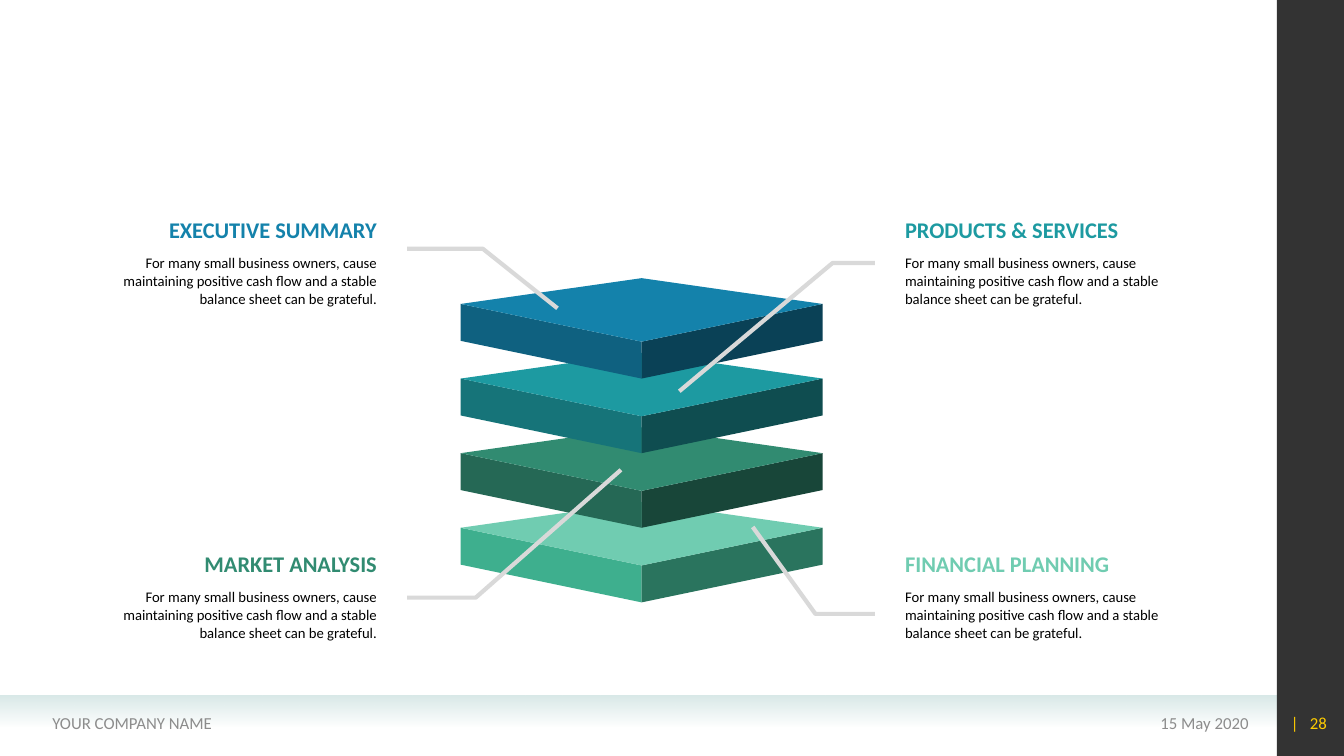
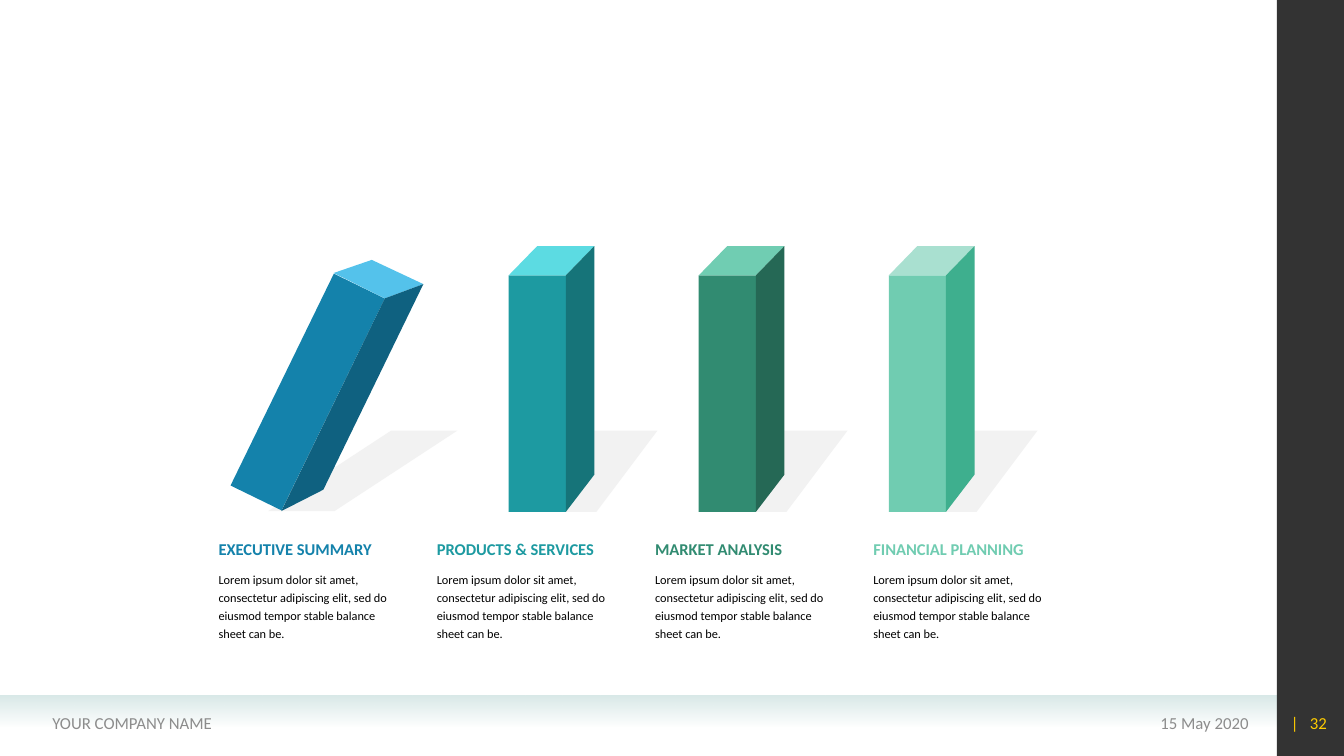
from pptx import Presentation
from pptx.dml.color import RGBColor
from pptx.enum.shapes import MSO_SHAPE
from pptx.enum.text import MSO_ANCHOR, PP_ALIGN
from pptx.oxml.ns import qn
from pptx.util import Cm, Pt
from lxml.etree import SubElement

FONT = "Calibri"
SLIDE_W, SLIDE_H = 33.87, 19.05
SIDE_BAND_X = 32.18

COLORS = {
    "text": "000000",
    "footer": "8C8C8C",
    "number": "FFCC00",
    "side band": "000000",
    "footer band": "D9E9E8",
    "leader": "D9D9D9",
    "shadow": "F2F2F2",
    "blue": "1482AB", "blue light": "54C2EB", "blue side": "0F6180", "blue dark": "0A4156",
    "teal": "1D9AA1", "teal light": "5CDBE2", "teal side": "167479", "teal dark": "0F4D50",
    "green": "318B71", "green light": "70CDB2", "green side": "256855", "green dark": "184639",
    "mint": "70CCB1", "mint light": "A9E0D0", "mint side": "3EAF8E", "mint dark": "2A745E",
}

TOPICS = [
    ("EXECUTIVE SUMMARY", "blue"),
    ("PRODUCTS & SERVICES", "teal"),
    ("MARKET ANALYSIS", "green"),
    ("FINANCIAL PLANNING", "mint"),
]
CASH_FLOW = ("For many small business owners, cause maintaining positive cash flow "
             "and a stable balance sheet can be grateful.")
LOREM = ("Lorem ipsum dolor sit amet, consectetur adipiscing elit, sed do eiusmod "
         "tempor stable balance sheet can be.")

# One leader per topic, from its slab out to its caption
LEADERS = [
    [(14.05, 7.77), (12.17, 6.27), (10.26, 6.27)],
    [(17.12, 9.86), (20.98, 6.63), (22.05, 6.63)],
    [(15.65, 11.84), (11.99, 15.06), (10.26, 15.06)],
    [(18.97, 13.28), (20.55, 15.47), (22.05, 15.47)],
]

# Parts of a pillar, measured from the top left of its box
UPRIGHT = {
    "shadow": [(1.54, 4.65), (0, 6.7), (2.21, 6.7), (3.75, 4.65)],
    "front": (0, 0.74, 1.44, 5.96), "tilt": 0,
    "lid": [(0.72, 0), (2.16, 0), (1.44, 0.74), (0, 0.74)],
    "side": [(1.44, 0.74), (2.16, 0), (2.16, 5.76), (1.44, 6.7)],
}
TILTED = {
    "shadow": [(4.07, 4.3), (0.97, 6.33), (2.64, 6.33), (5.74, 4.3)],
    "front": (1.25, 0.36, 1.43, 5.94), "tilt": 26,
    "lid": [(3.58, 0), (4.88, 0.61), (3.91, 0.97), (2.62, 0.33)],
    "side": [(3.91, 0.97), (4.88, 0.61), (2.36, 5.79), (1.3, 6.33)],
}


def rgb(color):
    return RGBColor.from_string(COLORS[color])


def add_block(slide, box, color=None):
    block = slide.shapes.add_shape(MSO_SHAPE.RECTANGLE, *map(Cm, box))
    block.shadow.inherit = False
    block.line.fill.background()
    if color:
        block.fill.solid()
        block.fill.fore_color.rgb = rgb(color)
    return block


def add_outline(slide, points, closed=True):
    (start_x, start_y), *rest = [(Cm(x), Cm(y)) for x, y in points]
    builder = slide.shapes.build_freeform(start_x, start_y, scale=1.0)
    builder.add_line_segments(rest, close=closed)
    outline = builder.convert_to_shape()
    outline.shadow.inherit = False
    return outline


def add_face(slide, points, color, left=0, top=0):
    face = add_outline(slide, [(left + x, top + y) for x, y in points])
    face.fill.solid()
    face.fill.fore_color.rgb = rgb(color)
    face.line.fill.background()


def add_leader(slide, points):
    leader = add_outline(slide, points, closed=False)
    leader.fill.background()
    leader.line.color.rgb = rgb("leader")
    leader.line.width = Pt(3)


def add_text(slide, box, runs, size, color, bold=False,
             align=PP_ALIGN.LEFT, anchor=MSO_ANCHOR.MIDDLE):
    """Add a one-paragraph text box and return the paragraph."""
    frame = slide.shapes.add_textbox(*map(Cm, box)).text_frame
    frame.word_wrap = True
    frame.vertical_anchor = anchor
    paragraph = frame.paragraphs[0]
    paragraph.alignment = align
    for words in runs:
        run = paragraph.add_run()
        run.text = words
        run.font.name = FONT
        run.font.size = Pt(size)
        run.font.bold = bold
        run.font.color.rgb = rgb(color)
    return paragraph


def add_caption(slide, heading_box, body_box, topic, body, sizes, anchor,
                align=PP_ALIGN.LEFT, space_before=0):
    heading, hue = topic
    heading_size, body_size = sizes
    paragraph = add_text(slide, body_box, [body], body_size, "text",
                         align=align, anchor=MSO_ANCHOR.TOP)
    paragraph.line_spacing = Pt(12.9)
    paragraph.space_before = Pt(space_before)
    add_text(slide, heading_box, [heading], heading_size, hue, True, align, anchor)


def set_alpha(color_element, percent):
    SubElement(color_element, qn("a:alpha")).set("val", str(percent * 1000))


def add_bands(slide):
    """Draw the two bands and hand them to the layout all slides share."""
    footer_band = add_block(slide, (0, 17.53, SIDE_BAND_X, 0.79))
    footer_band.fill.gradient()
    footer_band.fill.gradient_angle = 270
    for stop, position in zip(footer_band.fill.gradient_stops, (0, 1)):
        stop.color.rgb = rgb("footer band")
        stop.position = position
    set_alpha(list(footer_band.element.iter(qn("a:srgbClr")))[-1], 0)

    side_band = add_block(slide, (SIDE_BAND_X, 0, SLIDE_W - SIDE_BAND_X, SLIDE_H), "side band")
    set_alpha(next(side_band.element.iter(qn("a:srgbClr"))), 80)
    for band in (footer_band, side_band):
        slide.slide_layout.shapes.element.append(band.element)


def add_footer(slide, number):
    top, height = 17.7, 1.02
    add_text(slide, (23.11, top, 8.61, height), ["15 May 2020"], 12, "footer",
             align=PP_ALIGN.RIGHT)
    add_text(slide, (1.07, top, 12.45, height), ["YOUR COMPANY NAME"], 12, "footer")
    page = add_text(slide, (32, top, 1.69, height), ["| ", str(number)], 12, "number",
                    align=PP_ALIGN.RIGHT)
    # Letter spacing holds the bar away from the number
    next(page.runs[0].font._element.iter(qn("a:rPr"))).set("spc", "270")


def add_slab(slide, left, top, hue):
    width, corner, front, thickness = 9.12, 0.65, 1.6, 0.93
    middle = width / 2
    for edge, shade in ((0, "side"), (width, "dark")):
        add_face(slide, [(edge, corner), (middle, front), (middle, front + thickness),
                         (edge, corner + thickness)], f"{hue} {shade}", left, top)
    add_face(slide, [(0, corner), (middle, 0), (width, corner), (middle, front)],
             hue, left, top)


def add_pillar(slide, left, top, parts, hue):
    add_face(slide, parts["shadow"], "shadow", left, top)
    x, y, width, height = parts["front"]
    front = add_block(slide, (left + x, top + y, width, height), hue)
    front.rotation = parts["tilt"]
    add_face(slide, parts["lid"], f"{hue} light", left, top)
    add_face(slide, parts["side"], f"{hue} side", left, top)


def fill_stack_slide(slide):
    slab_pitch = 1.88
    for level, (_, hue) in reversed(list(enumerate(TOPICS))):
        add_slab(slide, 11.61, 7.01 + level * slab_pitch, hue)
    for points in LEADERS:
        add_leader(slide, points)

    columns = ((2.79, PP_ALIGN.RIGHT), (22.56, PP_ALIGN.LEFT))
    rows = (5.31, 13.72)
    width = 6.96
    for index, topic in enumerate(TOPICS):
        left, align = columns[index % 2]
        top = rows[index // 2]
        add_caption(slide, (left, top, width, 0.94), (left, top + 0.96, width, 2.08),
                    topic, CASH_FLOW, (16, 10.5), MSO_ANCHOR.BOTTOM, align)


def fill_pillar_slide(slide):
    pillar_pitch, caption_pitch = 4.79, 5.5
    width = 4.93
    for index, topic in enumerate(TOPICS):
        hue = topic[1]
        if index == 0:
            add_pillar(slide, 5.79, 6.55, TILTED, hue)
        else:
            add_pillar(slide, 12.82 + (index - 1) * pillar_pitch, 6.2, UPRIGHT, hue)
        left = 5.26 + index * caption_pitch
        add_caption(slide, (left, 13.46, width, 0.76), (left, 14.2, width, 2.06),
                    topic, LOREM, (11.8, 8.8), MSO_ANCHOR.MIDDLE, space_before=6.6)


def main():
    deck = Presentation()
    deck.slide_width, deck.slide_height = Cm(SLIDE_W), Cm(SLIDE_H)
    blank = deck.slide_layouts[6]
    for index, (number, fill_slide) in enumerate(((28, fill_stack_slide),
                                                  (32, fill_pillar_slide))):
        slide = deck.slides.add_slide(blank)
        if index == 0:
            add_bands(slide)
        add_footer(slide, number)
        fill_slide(slide)
    deck.save("out.pptx")


if __name__ == "__main__":
    main()
